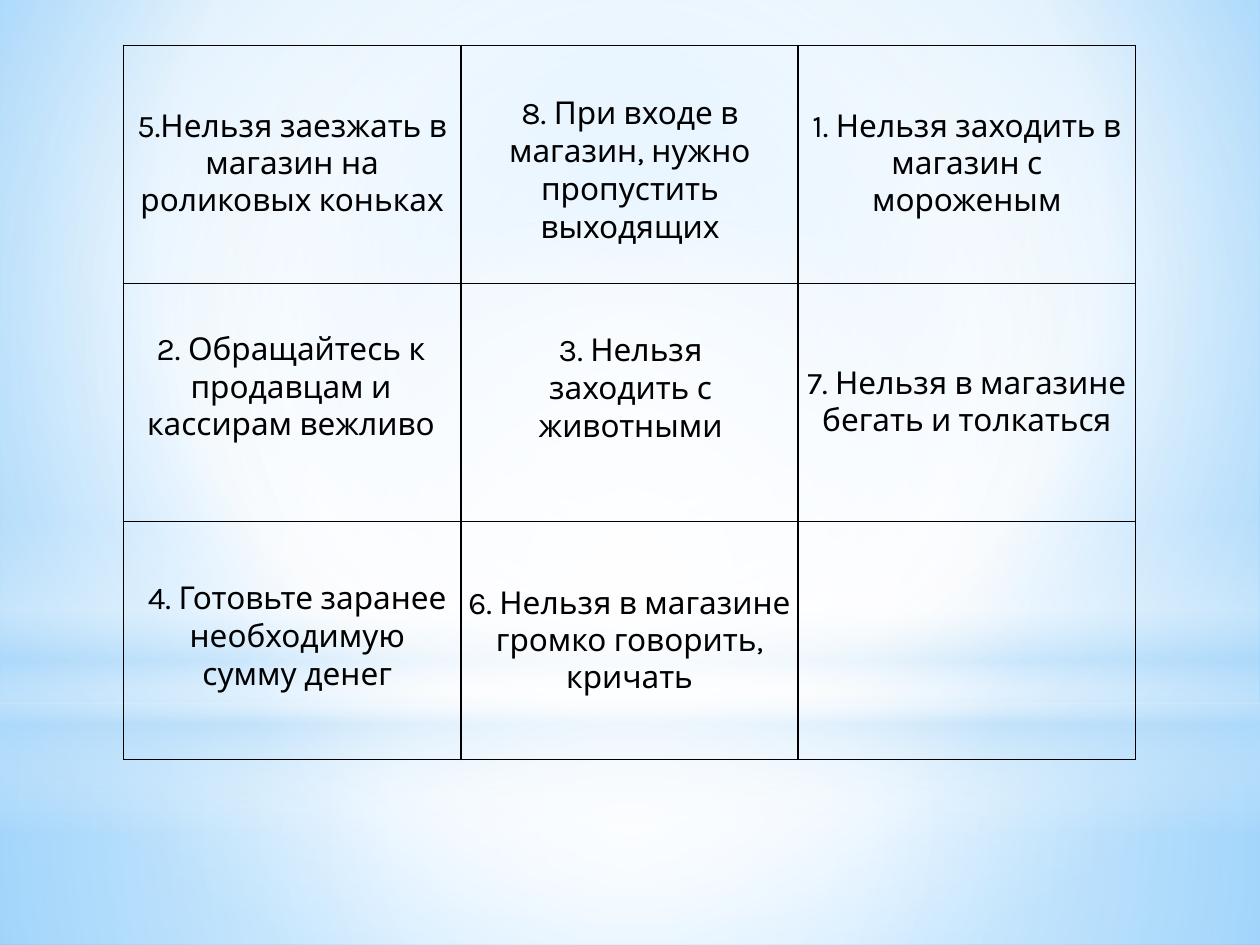
"""Builds a slide with a grid of rules for behaviour in a shop."""
from lxml import etree
from pptx import Presentation, util as u
from pptx.dml.color import RGBColor
from pptx.enum import shapes, text
from pptx.oxml.ns import qn

COLORS = {"black": "000000", "white": "FFFFFF", "mist": "B4DCFA",
          "sky": "9ED5FF", "blue": "5BB9FF"}
FONT, SIZE = "Karla", 18
CENTER = (50, 50, 50, 50)

BACKDROP = [(0, "sky", 100), (60, "white", 100), (100, "blue", 100)]
GLOWS = [
    ("RECTANGLE", (0, 401.76, 720, 138.24), {"focus": CENTER},
     [(0, "white", 91), (37, "white", 76), (100, "mist", 79)]),
    ("RECTANGLE", (0, 0, 720, 401.76), {"focus": CENTER},
     [(0, "white", 89), (48, "white", 62), (100, "mist", 79)]),
    ("RECTANGLE", (0, 296.64, 720, 180), {"angle": 90},
     [(0, "white", 0), (29, "white", 30), (45, "mist", 40),
      (55, "white", 26), (65, "mist", 60), (100, "white", 0)]),
    ("OVAL", (0, 126, 720, 401.76), {"focus": CENTER},
     [(0, "white", 100), (56, "white", 0)]),
]

TABLE_BOX = (70.56, 25.92, 578.4, 408.24)
CELLS = [
    ["5.Нельзя заезжать в магазин на роликовых коньках", "",
     "1. Нельзя заходить в магазин с мороженым"],
    ["", "", "7. Нельзя в магазине\nбегать и толкаться"],
    ["", "6. Нельзя в магазине громко говорить, кричать", ""],
]
RULES = [
    ("8. При входе в магазин, нужно пропустить выходящих", (270, 49.68, 180, 94.32)),
    ("2. Обращайтесь к продавцам и кассирам вежливо", (76.32, 184.32, 180, 72.72)),
    ("3. Нельзя заходить с животными", (277.92, 185.04, 164.88, 72.72)),
    ("4. Готовьте заранее необходимую сумму денег", (76.32, 326.88, 187.2, 72.72)),
]


def points(values):
    return [u.Pt(value) for value in values]


def add_child(parent, tag, **attributes):
    child = etree.SubElement(parent, qn(tag))
    for name, value in attributes.items():
        child.set(name, str(value))
    return child


def set_gradient(holder, stops, focus=None, angle=0):
    gradient = etree.Element(qn("a:gradFill"), rotWithShape="1")
    stop_list = add_child(gradient, "a:gsLst")
    for position, color, opacity in stops:
        stop = add_child(stop_list, "a:gs", pos=position * 1000)
        tint = add_child(stop, "a:srgbClr", val=COLORS[color])
        if opacity < 100:
            add_child(tint, "a:alpha", val=opacity * 1000)
    if focus:
        circle = add_child(gradient, "a:path", path="circle")
        sides = {side: value * 1000 for side, value in zip("ltrb", focus)}
        add_child(circle, "a:fillToRect", **sides)
    else:
        add_child(gradient, "a:lin", ang=angle * 60000, scaled=0)
    holder.replace(holder.find(qn("a:solidFill")), gradient)


def write(frame, words, font=FONT, size=SIZE, color="black"):
    frame.word_wrap = True
    frame.text = words
    for para in frame.paragraphs:
        para.alignment = text.PP_ALIGN.CENTER
        para.font.size = u.Pt(size)
        for span in para.runs:
            span.font.name = font
            span.font.size = u.Pt(size)
            span.font.color.rgb = RGBColor.from_string(COLORS[color])


def set_borders(cell, width=1, color="black"):
    properties = cell._tc.get_or_add_tcPr()
    for index, side in enumerate(("lnL", "lnR", "lnT", "lnB")):
        line = etree.Element(qn(f"a:{side}"), w=str(u.Pt(width)))
        add_child(add_child(line, "a:solidFill"), "a:srgbClr", val=COLORS[color])
        properties.insert(index, line)


def add_glow(page, kind, place, direction, stops):
    glow = page.shapes.add_shape(shapes.MSO_SHAPE[kind], *points(place))
    glow.shadow.inherit = False
    glow.line.fill.background()
    glow.fill.solid()
    set_gradient(glow._element.spPr, stops, **direction)


def add_grid(page):
    grid = page.shapes.add_table(len(CELLS), len(CELLS[0]), *points(TABLE_BOX)).table
    grid.first_row = grid.horz_banding = False
    for row, line in enumerate(CELLS):
        for column, words in enumerate(line):
            cell = grid.cell(row, column)
            cell.fill.background()
            cell.vertical_anchor = text.MSO_ANCHOR.MIDDLE
            cell.margin_left = cell.margin_right = u.Pt(3.6)
            cell.margin_top = cell.margin_bottom = 0
            write(cell.text_frame, words)
            set_borders(cell)


def main():
    deck = Presentation()
    deck.slide_width, deck.slide_height = points((720, 540))
    page = deck.slides.add_slide(deck.slide_layouts[6])
    page.background.fill.solid()
    set_gradient(page._element.find(".//" + qn("p:bgPr")), BACKDROP,
                 focus=(20, 10, 20, 60))
    for glow in GLOWS:
        add_glow(page, *glow)
    add_grid(page)
    for words, place in RULES:
        box = page.shapes.add_textbox(*points(place))
        write(box.text_frame, words)
        box.text_frame.auto_size = text.MSO_AUTO_SIZE.SHAPE_TO_FIT_TEXT
    deck.save("out.pptx")


if __name__ == "__main__":
    main()
